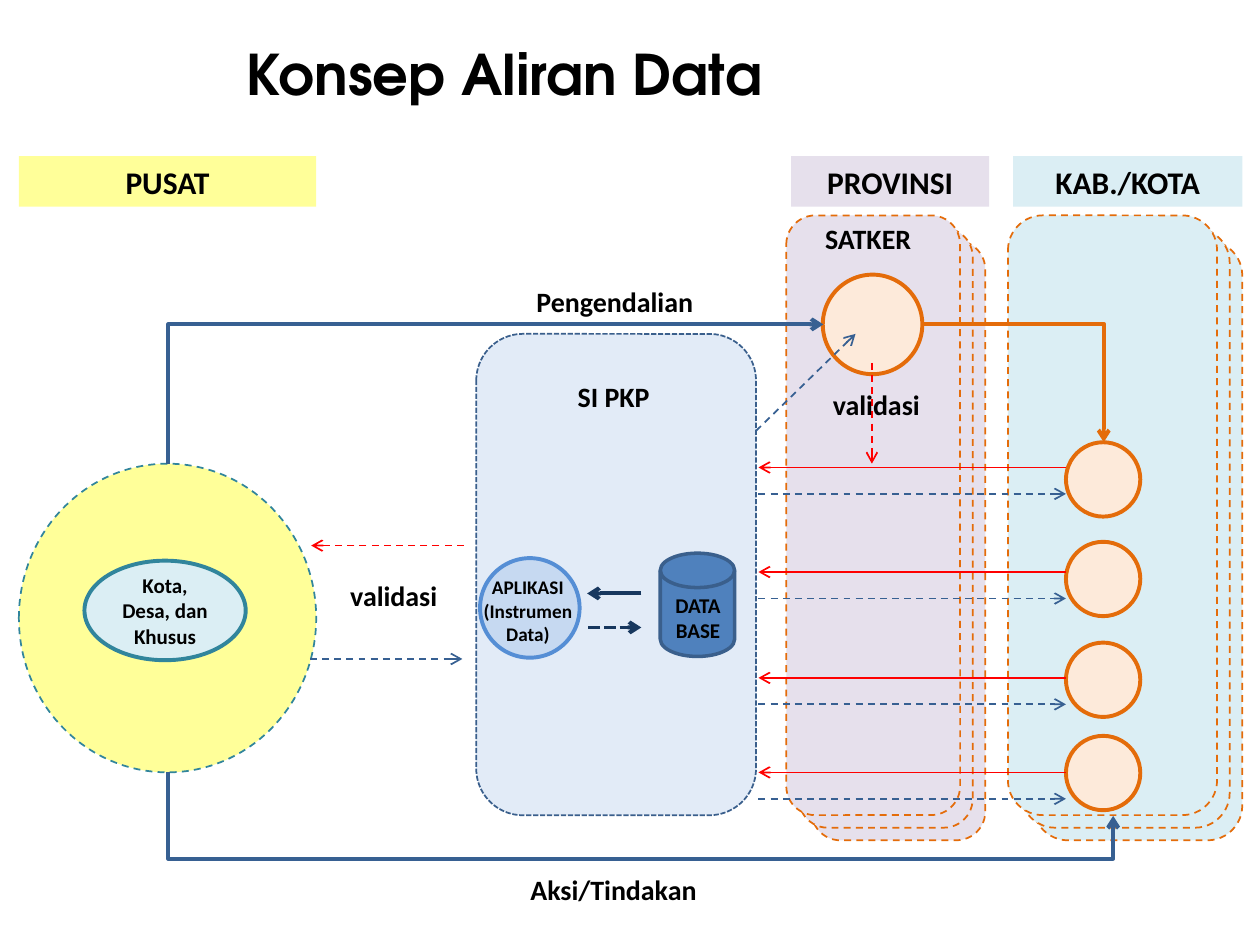
from pptx import Presentation
from pptx.dml.color import RGBColor
from pptx.enum.dml import MSO_LINE
from pptx.enum.shapes import MSO_CONNECTOR, MSO_SHAPE
from pptx.enum.text import MSO_ANCHOR, PP_ALIGN
from pptx.oxml.ns import qn
from pptx.util import Inches, Pt
from lxml import etree

RECT, ROUND, OVAL = MSO_SHAPE.RECTANGLE, MSO_SHAPE.ROUNDED_RECTANGLE, MSO_SHAPE.OVAL
DISK = MSO_SHAPE.FLOWCHART_MAGNETIC_DISK
STRAIGHT, ELBOW = MSO_CONNECTOR.STRAIGHT, MSO_CONNECTOR.ELBOW
DASH, FINE_DASH = MSO_LINE.DASH, MSO_LINE.SQUARE_DOT
CENTER, LEFT = PP_ALIGN.CENTER, PP_ALIGN.LEFT
MIDDLE, TOP = MSO_ANCHOR.MIDDLE, MSO_ANCHOR.TOP

YELLOW, LILAC, AQUA, PEACH, SKY = "FFFF99", "E6E0EC", "DBEEF4", "FDEADA", "C6D9F1"
ORANGE, BLUE, NAVY, RED, TEAL, STEEL = "E46C0A", "376092", "17375E", "FF0000", "31859C", "3A5F8C"

TITLE = "Konsep Aliran Data"
HEADERS = [
    ("PUSAT", 0.15, 2.36, YELLOW),
    ("PROVINSI", 6.28, 1.57, LILAC),
    ("KAB./KOTA", 8.04, 1.82, AQUA),
]
STACKS = [(6.24, 1.38, LILAC), (8, 1.66, AQUA)]
STACK_TOP, STACK_HEIGHT, STACK_STEP = 1.71, 4.76, 0.1
NODES = [
    (ROUND, (3.78, 2.65, 2.22, 3.82), (SKY, 50), (STEEL, 1, FINE_DASH)),
    (OVAL, (0.15, 3.68, 2.36, 2.45), (YELLOW, 100), (TEAL, 1, DASH)),
    (OVAL, (6.53, 2.18, 0.79, 0.79), (PEACH, 100), (ORANGE, 2.25, None)),
    (DISK, (5.24, 4.39, 0.59, 0.82), ("4F81BD", 100), (STEEL, 2, None)),
    (OVAL, (3.81, 4.43, 0.79, 0.79), (SKY, 100), ("558ED5", 2.25, None)),
]
PLACES = ["Kota, Desa, dan Khusus"]
LABELS = [
    (["SI PKP"], (3.76, 2.96, 2.22, 0.37), 16),
    (["SATKER"], (6.2, 1.71, 1.38, 0.37), 16),
    (["DATA", "BASE"], (5.07, 4.65, 0.94, 0.5), 12),
    (["APLIKASI", "(Instrumen Data)"], (3.72, 4.52, 0.94, 0.66), 11),
    (["validasi"], (6.4, 3.03, 1.11, 0.37), 16),
    (["validasi"], (2.57, 4.54, 1.11, 0.37), 16),
    (["Pengendalian"], (3.95, 2.21, 1.86, 0.37), 16),
    (["Aksi/Tindakan"], (3.94, 6.88, 1.86, 0.37), 16),
]
CITIES = [(3.51, 3.71), (4.3, 4.54), (5.1, 5.38), (5.84, 6.13)]
CITY_LEFT, CITY_SIZE, SYSTEM_RIGHT, RETURN_GAP = 8.46, 0.59, 6.02, 0.21
ARROWS = [
    ((4.67, 4.98), (5.09, 4.98), NAVY, 2.25, FINE_DASH),
    ((5.09, 4.71), (4.66, 4.71), NAVY, 2.25, None),
    ((2.46, 5.23), (3.67, 5.23), BLUE, 1, DASH),
    ((3.68, 4.33), (2.47, 4.33), RED, 1, DASH),
    ((6.92, 2.88), (6.92, 3.68), RED, 1, DASH),
    ((6, 3.42), (6.79, 2.65), BLUE, 1, DASH),
]
BENDS = [
    ("bentConnector3", (4.91, 2.55, 0.35, 7.5), 270, ["flipH"], BLUE, 1.97),
    ("bentConnector2", (7.32, 2.57, 1.44, 0.94), 0, [], ORANGE, None),
    ("bentConnector2", (3.38, 0.53, 1.11, 5.2), 90, ["flipH", "flipV"], BLUE, None),
]

prs = Presentation()
prs.slide_width, prs.slide_height = Inches(10), Inches(7.5)
s = prs.slides.add_slide(prs.slide_layouts[5])


def rgb(value):
    return RGBColor.from_string(value)


def write(sp, lines, size, font="Calibri", align=CENTER, anchor=MIDDLE):
    tf = sp.text_frame
    tf.word_wrap = True
    tf.vertical_anchor = anchor
    for i, line in enumerate(lines):
        p = tf.add_paragraph() if i else tf.paragraphs[0]
        p.alignment = align
        r = p.add_run()
        r.text = line
        r.font.name, r.font.size, r.font.bold = font, Pt(size), True
        r.font.color.rgb = rgb("000000")


def style_line(line, color, width, dash):
    line.color.rgb = rgb(color)
    line.width = Pt(width)
    if dash:
        line.dash_style = dash


def add_node(kind, box, fill, line=None):
    sp = s.shapes.add_shape(kind, *map(Inches, box))
    sp.shadow.inherit = False
    sp.fill.solid()
    color, opacity = fill
    sp.fill.fore_color.rgb = rgb(color)
    if opacity < 100:
        clr = sp._element.spPr.find(qn("a:solidFill")).find(qn("a:srgbClr"))
        etree.SubElement(clr, qn("a:alpha"), val=str(opacity * 1000))
    if line:
        style_line(sp.line, *line)
    else:
        sp.line.fill.background()
    return sp


def add_arrow(kind, start, end, color, width, dash=None):
    c = s.shapes.add_connector(kind, *map(Inches, (*start, *end)))
    style_line(c.line, color, width, dash)
    spPr = c._element.spPr
    etree.SubElement(spPr.find(qn("a:ln")), qn("a:tailEnd"), type="arrow")
    etree.SubElement(spPr, qn("a:effectLst"))
    return spPr


def add_bend(preset, box, rotation, flips, color, bend):
    x, y, w, h = box
    spPr = add_arrow(ELBOW, (x, y), (x + w, y + h), color, 2.25)
    xfrm, geom = spPr.find(qn("a:xfrm")), spPr.find(qn("a:prstGeom"))
    xfrm.set("rot", str(rotation * 60000))
    for flip in flips:
        xfrm.set(flip, "1")
    geom.set("prst", preset)
    if bend:
        guides = geom.find(qn("a:avLst"))
        etree.SubElement(guides, qn("a:gd"), name="adj1", fmla=f"val {round(bend * 100000)}")


title = s.shapes.title
title.left, title.top, title.width, title.height = map(Inches, (1.86, 0.39, 8.23, 0.5))
write(title, [TITLE], 32, "TeX Gyre Adventor", LEFT)
title.text_frame.paragraphs[0].line_spacing = 0.75

for left, width, color in STACKS:
    for depth in (2, 1, 0):
        shift = depth * STACK_STEP
        add_node(ROUND, (left + shift, STACK_TOP + shift, width, STACK_HEIGHT),
                 (color, 100), (ORANGE, 1, DASH))

for text, left, width, color in HEADERS:
    write(add_node(RECT, (left, 1.24, width, 0.4), (color, 100)), [text], 18)

for node in NODES:
    add_node(*node)
places = add_node(OVAL, (0.67, 4.45, 1.28, 0.79), (AQUA, 100), (TEAL, 2.25, None))
write(places, PLACES, 12)

for top, y in CITIES:
    add_node(OVAL, (CITY_LEFT, top, CITY_SIZE, CITY_SIZE), (PEACH, 100), (ORANGE, 2.25, None))
    add_arrow(STRAIGHT, (CITY_LEFT, y), (SYSTEM_RIGHT, y), RED, 1)
    back = y + RETURN_GAP
    add_arrow(STRAIGHT, (SYSTEM_RIGHT, back), (CITY_LEFT, back), BLUE, 1, DASH)

for arrow in ARROWS:
    add_arrow(STRAIGHT, *arrow)
for bend in BENDS:
    add_bend(*bend)

for lines, box, size in LABELS:
    write(s.shapes.add_textbox(*map(Inches, box)), lines, size, anchor=TOP)

prs.save("out.pptx")
